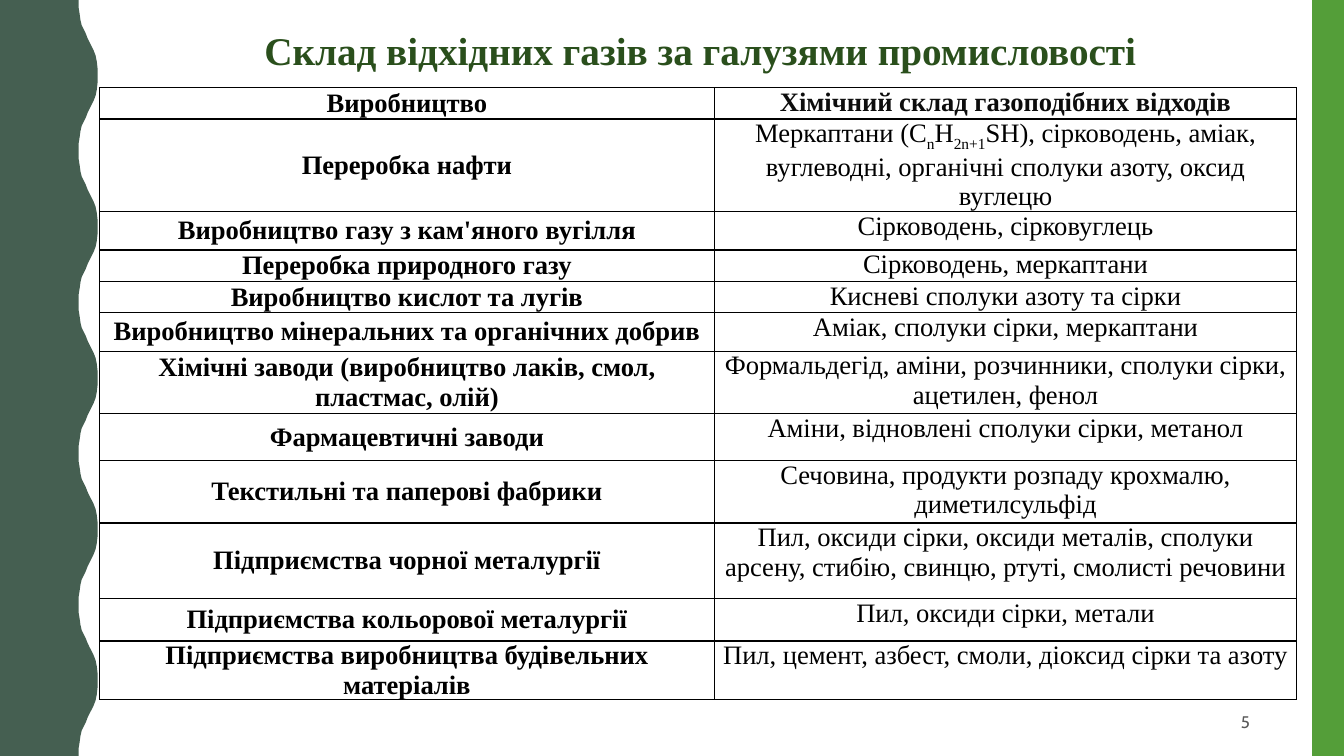
from pptx import Presentation
from pptx import util as u
from pptx.dml.color import RGBColor
from pptx.enum import shapes, text
from pptx.oxml import parse_xml
from pptx.oxml.ns import nsdecls

DARK_GREEN = RGBColor(0x45, 0x5F, 0x51)
GREEN = RGBColor(0x54, 0x9E, 0x39)
TITLE_GREEN = RGBColor(0x2A, 0x4F, 0x1C)
BLACK = RGBColor(0, 0, 0)
NEAR_BLACK = RGBColor(0x0D, 0x0D, 0x0D)
GREY = RGBColor(0x59, 0x59, 0x59)
SERIF = "Times New Roman"
WIDTH, HEIGHT = 33.87, 19.05

WAVE_PERIOD = 3.81
HALF_WAVE = [
    (1.98, 0), (1.98, 0.18), (2.01, 0.36), (2.03, 0.51), (2.06, 0.64),
    (2.11, 0.74), (2.16, 0.84), (2.21, 0.97), (2.26, 1.07), (2.31, 1.17),
    (2.36, 1.27), (2.41, 1.4), (2.44, 1.55), (2.46, 1.73), (2.46, 1.9),
]

COLUMNS = [15.49, 14.68]
ROWS = [
    (0.79, "Виробництво", "Хімічний склад газоподібних відходів"),
    (1.83, "Переробка нафти",
     "Меркаптани (С_n_H_2n+1_SH), сірководень, аміак, вуглеводні, "
     "органічні сполуки азоту, оксид вуглецю"),
    (0.97, "Виробництво газу з кам'яного вугілля", "Сірководень, сірковуглець"),
    (0.79, "Переробка природного газу", "Сірководень, меркаптани"),
    (0.79, "Виробництво кислот та лугів", "Кисневі сполуки азоту та сірки"),
    (0.97, "Виробництво мінеральних та органічних добрив",
     "Аміак, сполуки сірки, меркаптани"),
    (1.57, "Хімічні заводи (виробництво лаків, смол, пластмас, олій)",
     "Формальдегід, аміни, розчинники, сполуки сірки, ацетилен, фенол"),
    (1.19, "Фармацевтичні заводи", "Аміни, відновлені сполуки сірки, метанол"),
    (1.57, "Текстильні та паперові фабрики",
     "Сечовина, продукти розпаду крохмалю, диметилсульфід"),
    (1.9, "Підприємства чорної металургії",
     "Пил, оксиди сірки, оксиди металів, сполуки арсену, стибію, свинцю, "
     "ртуті, смолисті речовини"),
    (1.07, "Підприємства кольорової металургії", "Пил, оксиди сірки, метали"),
    (0.99, "Підприємства виробництва будівельних матеріалів",
     "Пил, цемент, азбест, смоли, діоксид сірки та азоту"),
]


def style(font, size, color, bold=False, name=SERIF):
    font.size = u.Pt(size)
    font.name = name
    font.bold = bold
    font.color.rgb = color


def paint(sp, color):
    sp.shadow.inherit = False
    sp.fill.solid()
    sp.fill.fore_color.rgb = color
    sp.line.fill.background()


def add_wave(s, x, y, h):
    period = HALF_WAVE + [(px, WAVE_PERIOD - py) for px, py in HALF_WAVE[::-1]]
    edge = [(px, py + k * WAVE_PERIOD)
            for k in range(round(h / WAVE_PERIOD)) for px, py in period]
    points = [(u.Cm(x + px), u.Cm(y + py)) for px, py in edge + [(0, h)]]
    fb = s.shapes.build_freeform(u.Cm(x), u.Cm(y))
    fb.add_line_segments(points, close=True)
    paint(fb.convert_to_shape(), DARK_GREEN)


def add_stripe(s, x, y, w, h):
    sp = s.shapes.add_shape(shapes.MSO_SHAPE.RECTANGLE,
                            u.Cm(x), u.Cm(y), u.Cm(w), u.Cm(h))
    paint(sp, GREEN)


def add_title(s, x, y, w, h):
    tf = s.shapes.add_textbox(u.Cm(x), u.Cm(y), u.Cm(w), u.Cm(h)).text_frame
    tf.word_wrap = False
    tf.auto_size = text.MSO_AUTO_SIZE.SHAPE_TO_FIT_TEXT
    p = tf.paragraphs[0]
    p.text = "Склад відхідних газів за галузями промисловості"
    p.alignment = text.PP_ALIGN.CENTER
    p._p.get_or_add_pPr().set("indent", str(u.Cm(1.5)))
    style(p.runs[0].font, 28, TITLE_GREEN, True)


def add_borders(cell):
    tcPr = cell._tc.get_or_add_tcPr()
    for side in ("lnL", "lnR", "lnT", "lnB"):
        tcPr.append(parse_xml(
            f'<a:{side} {nsdecls("a")} w="{u.Pt(1)}"><a:solidFill>'
            f'<a:srgbClr val="{BLACK}"/></a:solidFill></a:{side}>'))


def fill_cell(cell, content, color, bold, anchor):
    add_borders(cell)
    cell.fill.background()
    cell.margin_left = cell.margin_right = u.Cm(0.18)
    cell.margin_top = cell.margin_bottom = 0
    cell.vertical_anchor = anchor
    p = cell.text_frame.paragraphs[0]
    p.alignment = text.PP_ALIGN.CENTER
    for i, part in enumerate(content.split("_")):
        r = p.add_run()
        r.text = part
        style(r.font, 19, color, bold)
        if i % 2:
            r._r.get_or_add_rPr().set("baseline", "-25000")


def add_waste_table(s, x, y, w, h):
    table = s.shapes.add_table(len(ROWS), len(COLUMNS),
                               u.Cm(x), u.Cm(y), u.Cm(w), u.Cm(h)).table
    table.first_row = table.horz_banding = False
    for column, width in zip(table.columns, COLUMNS):
        column.width = u.Cm(width)
    for i, (height, industry, waste) in enumerate(ROWS):
        header = i == 0
        table.rows[i].height = u.Cm(height)
        fill_cell(table.cell(i, 0), industry, BLACK, True,
                  text.MSO_ANCHOR.MIDDLE)
        fill_cell(table.cell(i, 1), waste, NEAR_BLACK if header else BLACK,
                  header, text.MSO_ANCHOR.TOP)


def add_page_number(s, x, y, w, h):
    tf = s.shapes.add_textbox(u.Cm(x), u.Cm(y), u.Cm(w), u.Cm(h)).text_frame
    tf.word_wrap = True
    tf.vertical_anchor = text.MSO_ANCHOR.MIDDLE
    p = tf.paragraphs[0]
    p.text = "5"
    p.alignment = text.PP_ALIGN.RIGHT
    style(p.runs[0].font, 12, GREY, name="Cabin")


def main():
    prs = Presentation()
    prs.slide_width, prs.slide_height = u.Cm(WIDTH), u.Cm(HEIGHT)
    s = prs.slides.add_slide(prs.slide_layouts[6])
    add_wave(s, 0, 0, HEIGHT)
    add_stripe(s, 33.07, 0, 0.8, HEIGHT)
    add_waste_table(s, 2.51, 2.21, sum(COLUMNS), 15.75)
    add_title(s, 4.78, 0.53, 24.23, 1.45)
    add_page_number(s, 23.93, 17.7, 7.82, 0.97)
    prs.save("out.pptx")


if __name__ == "__main__":
    main()
